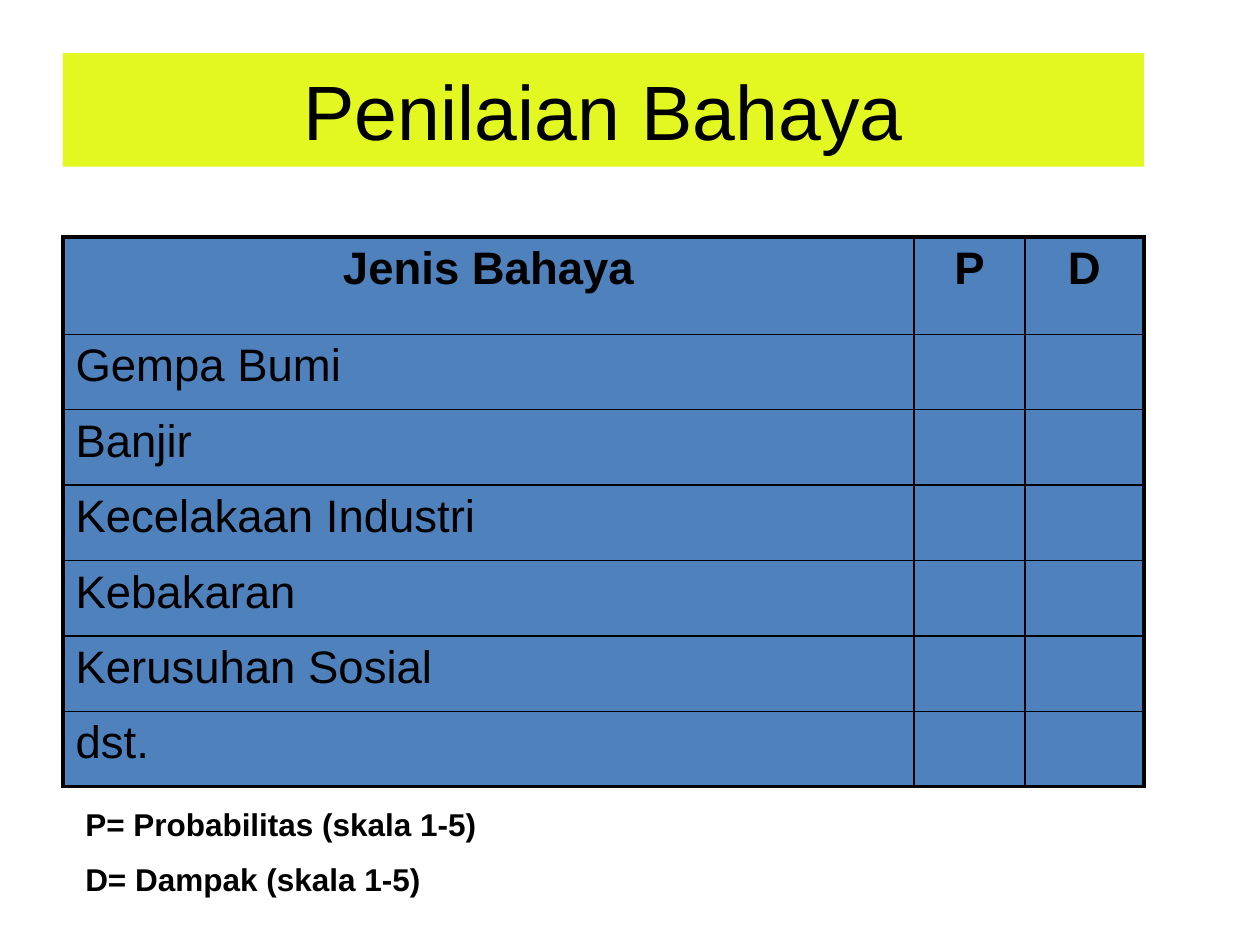
from dataclasses import dataclass

from lxml.etree import SubElement
from pptx import Presentation
from pptx.dml.color import RGBColor
from pptx.enum.text import MSO_ANCHOR, PP_ALIGN
from pptx.oxml.ns import qn
from pptx.util import Cm, Pt

COLOURS = {"ink": "000000", "banner": "E3F721", "cell": "4F81BD"}
HEADINGS = ["Jenis Bahaya", "P", "D"]
HAZARDS = ["Gempa Bumi", "Banjir", "Kecelakaan Industri", "Kebakaran", "Kerusuhan Sosial", "dst."]
COLUMN_WIDTHS = [17.16, 2.23, 2.4]
HEADER_HEIGHT, ROW_HEIGHT = 1.96, 1.52
OUTER_LINE, INNER_LINE = 2.25, 1


@dataclass
class TextBlock:
    lines: list[str]
    left: float
    top: float
    width: float
    height: float
    size: float
    bold: bool = False
    align: PP_ALIGN = PP_ALIGN.LEFT
    fill: str | None = None
    gap: float = 0


BLOCKS = [
    TextBlock(["Penilaian Bahaya"], 1.27, 1.07, 21.79, 2.29, 44, align=PP_ALIGN.CENTER, fill="banner"),
    TextBlock(["P= Probabilitas (skala 1-5)", "D= Dampak (skala 1-5)"],
              1.47, 16.08, 9.09, 2.16, 18, bold=True, gap=10),
]


def colour(name: str) -> RGBColor:
    """Return the named colour."""
    return RGBColor.from_string(COLOURS[name])


def write(para, text: str, size: float, bold: bool, align: PP_ALIGN) -> None:
    """Fill a paragraph with one formatted span."""
    para.alignment = align
    span = para.add_run()
    span.text = text
    for key, value in {"name": "Arial", "size": Pt(size), "bold": bold}.items():
        setattr(span.font, key, value)
    span.font.color.rgb = colour("ink")


def draw_block(page, block: TextBlock) -> None:
    """Draw a text box, with a fill if it has one."""
    box = page.shapes.add_textbox(*map(Cm, (block.left, block.top, block.width, block.height)))
    if block.fill:
        box.fill.solid()
        box.fill.fore_color.rgb = colour(block.fill)
    frame = box.text_frame
    for key, value in {"word_wrap": True, "vertical_anchor": MSO_ANCHOR.MIDDLE}.items():
        setattr(frame, key, value)
    for index, line in enumerate(block.lines):
        para = frame.add_paragraph() if index else frame.paragraphs[0]
        para.space_before = Pt(block.gap if index else 0)
        write(para, line, block.size, block.bold, block.align)


def draw_borders(cell, widths: dict[str, float]) -> None:
    """Draw the four cell borders, given in points by side."""
    properties = cell._tc.get_or_add_tcPr()
    for position, (side, width) in enumerate(widths.items()):
        line = SubElement(properties, qn(f"a:ln{side}"), w=str(Pt(width)))
        fill = SubElement(line, qn("a:solidFill"))
        SubElement(fill, qn("a:srgbClr"), val=COLOURS["ink"])
        properties.insert(position, line)


def draw_hazard_table(page) -> None:
    """Draw the hazard table with a heavy outer frame."""
    rows = [HEADINGS] + [[hazard, "", ""] for hazard in HAZARDS]
    heights = [HEADER_HEIGHT] + [ROW_HEIGHT] * len(HAZARDS)
    frame = page.shapes.add_table(len(rows), len(HEADINGS), Cm(1.27), Cm(4.78),
                                  Cm(sum(COLUMN_WIDTHS)), Cm(sum(heights)))
    table = frame.table
    for column, width in zip(table.columns, COLUMN_WIDTHS):
        column.width = Cm(width)
    for row, height in zip(table.rows, heights):
        row.height = Cm(height)
    for row, texts in enumerate(rows):
        for column, text in enumerate(texts):
            cell = table.cell(row, column)
            cell.fill.solid()
            cell.fill.fore_color.rgb = colour("cell")
            outer = {"L": column == 0, "R": column == len(texts) - 1,
                     "T": row == 0, "B": row == len(rows) - 1}
            draw_borders(cell, {side: OUTER_LINE if edge else INNER_LINE for side, edge in outer.items()})
            if text:
                align = PP_ALIGN.LEFT if row else PP_ALIGN.CENTER
                write(cell.text_frame.paragraphs[0], text, 26, row == 0, align)


def main() -> None:
    """Build and save the slide."""
    deck = Presentation()
    for key, value in {"slide_width": Cm(25.4), "slide_height": Cm(19.05)}.items():
        setattr(deck, key, value)
    page = deck.slides.add_slide(deck.slide_layouts[6])
    title, legend = BLOCKS
    draw_block(page, title)
    draw_hazard_table(page)
    draw_block(page, legend)
    deck.save("out.pptx")


if __name__ == "__main__":
    main()
